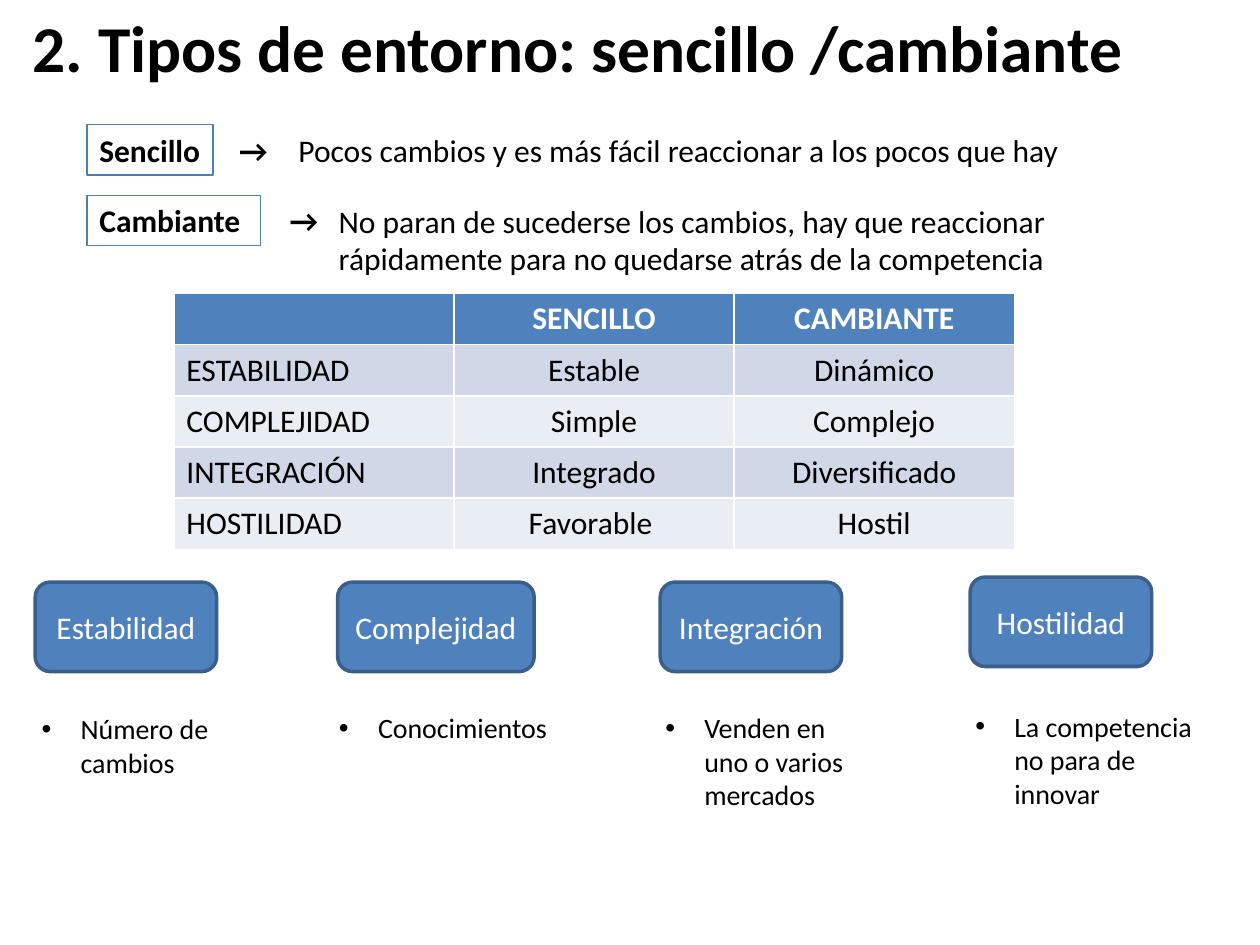
import pptx
import pptx.util
import pptx.dml.color
import pptx.enum.shapes
import pptx.enum.text
import pptx.oxml
import pptx.oxml.ns
from dataclasses import dataclass

ALIGN = pptx.enum.text.PP_ALIGN
ANCHOR = pptx.enum.text.MSO_ANCHOR
SHAPE = pptx.enum.shapes.MSO_SHAPE
COLS, ROWS = 100, 75


@dataclass(frozen=True)
class Theme:
    font: str = "Calibri"
    title: float = 37.4
    text: float = 18
    bullet: float = 16
    ink: str = "000000"
    paper: str = "FFFFFF"
    accent: str = "4F81BD"
    frame: str = "4B7EBC"
    edge: str = "3A5F8C"
    bands: tuple = ("E9EDF4", "D0D8E8")


def rgb(value):
    return pptx.dml.color.RGBColor.from_string(value)


def set_format(obj, values):
    for name, value in values.items():
        setattr(obj, name, value)


class Deck:
    def __init__(self, theme):
        self.theme = theme
        self.prs = pptx.Presentation()
        set_format(self.prs, {"slide_width": pptx.util.Inches(10),
                              "slide_height": pptx.util.Inches(7.5)})
        self.s = self.prs.slides.add_slide(self.prs.slide_layouts[4])

    def box(self, col, row, cols, rows):
        w, h = self.prs.slide_width, self.prs.slide_height
        return (round(col * w / COLS), round(row * h / ROWS),
                round(cols * w / COLS), round(rows * h / ROWS))

    def place(self, sp, at):
        set_format(sp, dict(zip(("left", "top", "width", "height"), self.box(*at))))

    def add_words(self, tf, text, size, color, bold=False, align=ALIGN.LEFT):
        p = tf.paragraphs[0]
        set_format(p, {"alignment": align, "space_before": pptx.util.Pt(0)})
        r = p.add_run()
        r.text = text
        set_format(r.font, {"name": self.theme.font, "size": pptx.util.Pt(size),
                            "bold": bold})
        r.font.color.rgb = rgb(color)

    def set_frame(self, tf, anchor=ANCHOR.TOP, wrap=True):
        set_format(tf, {"word_wrap": wrap, "vertical_anchor": anchor,
                        "auto_size": pptx.enum.text.MSO_AUTO_SIZE.NONE})

    def title(self, text, at):
        sp = self.s.shapes.title
        self.place(sp, at)
        self.set_frame(sp.text_frame, ANCHOR.MIDDLE)
        self.add_words(sp.text_frame, text, self.theme.title, self.theme.ink, True)

    def bullet(self, idx, text, at):
        sp = self.s.placeholders[idx]
        self.place(sp, at)
        tf = sp.text_frame
        self.set_frame(tf)
        pPr = tf.paragraphs[0]._p.get_or_add_pPr()
        indent = pptx.util.Inches(0.31)
        pPr.set("marL", str(indent))
        pPr.set("indent", str(-indent))
        ns = pptx.oxml.ns.nsdecls("a")
        for tag, name, value in (("buFont", "typeface", "Arial"), ("buChar", "char", "•")):
            pPr.append(pptx.oxml.parse_xml(f'<a:{tag} {ns} {name}="{value}"/>'))
        self.add_words(tf, text, self.theme.bullet, self.theme.ink)

    def text(self, text, at, bold=False, wrap=True):
        sp = self.s.shapes.add_textbox(*self.box(*at))
        self.set_frame(sp.text_frame, wrap=wrap)
        self.add_words(sp.text_frame, text, self.theme.text, self.theme.ink, bold)

    def shape(self, kind, at, line, weight, fill=None):
        sp = self.s.shapes.add_shape(kind, *self.box(*at))
        sp.shadow.inherit = False
        if fill:
            sp.fill.solid()
            sp.fill.fore_color.rgb = rgb(fill)
        else:
            sp.fill.background()
        sp.line.color.rgb = rgb(line)
        sp.line.width = pptx.util.Pt(weight)
        return sp.text_frame

    def label(self, text, at):
        tf = self.shape(SHAPE.RECTANGLE, at, self.theme.frame, 0.75)
        self.set_frame(tf)
        self.add_words(tf, text, self.theme.text, self.theme.ink, True)

    def card(self, text, at):
        tf = self.shape(SHAPE.FLOWCHART_ALTERNATE_PROCESS, at, self.theme.edge, 2,
                        self.theme.accent)
        self.set_frame(tf, ANCHOR.MIDDLE)
        self.add_words(tf, text, self.theme.text, self.theme.paper, align=ALIGN.CENTER)

    def table(self, rows, at):
        t = self.theme
        tb = self.s.shapes.add_table(len(rows), len(rows[0]), *self.box(*at)).table
        for i, row in enumerate(rows):
            for j, value in enumerate(row):
                cell = tb.cell(i, j)
                cell.fill.solid()
                cell.fill.fore_color.rgb = rgb(t.bands[i % 2] if i else t.accent)
                if value:
                    self.add_words(cell.text_frame, value, t.text, t.ink if i else t.paper,
                                   i == 0, ALIGN.CENTER if j else ALIGN.LEFT)


def main():
    deck = Deck(Theme())
    deck.title("2. Tipos de entorno: sencillo /cambiante", (1.6, 0.5, 90, 6.3))

    definitions = (
        ("Sencillo", 9.9, 10, 18, 22.7, 65.9, 4,
         "Pocos cambios y es más fácil reaccionar a los pocos que hay"),
        ("Cambiante", 15.5, 13.8, 22, 25.9, 66.6, 7.1,
         "No paran de sucederse los cambios, hay que reaccionar "
         "rápidamente para no quedarse atrás de la competencia"),
    )
    for name, row, width, arrow, col, cols, rows, meaning in definitions:
        deck.label(name, (6.9, row, width, 4))
        deck.text("→", (arrow, row, 4.5, 4), bold=True, wrap=False)
        deck.text(meaning, (col, row, cols, rows))

    deck.table((
        ("", "SENCILLO", "CAMBIANTE"),
        ("ESTABILIDAD", "Estable", "Dinámico"),
        ("COMPLEJIDAD", "Simple", "Complejo"),
        ("INTEGRACIÓN", "Integrado", "Diversificado"),
        ("HOSTILIDAD", "Favorable ", "Hostil"),
    ), (13.8, 23.3, 66.7, 20.3))

    factors = (
        ("Estabilidad", (2.8, 46.2, 14.4, 7.1), "Número de cambios", (2.3, 56, 15.6, 6.4)),
        ("Complejidad", (26.8, 46.2, 15.6, 7.1), "Conocimientos", (25.9, 55.9, 19.2, 3.7)),
        ("Integración", (52.4, 46.2, 14.4, 7.1), "Venden en uno o varios mercados",
         (51.8, 55.9, 17.1, 9.1)),
        ("Hostilidad", (77, 45.8, 14.4, 7.1), "La competencia no para de innovar",
         (76.4, 55.8, 20.8, 9.1)),
    )
    for idx, (name, card_at, note, note_at) in enumerate(factors, 1):
        deck.card(name, card_at)
        deck.bullet(idx, note, note_at)

    deck.prs.save("out.pptx")


if __name__ == "__main__":
    main()
